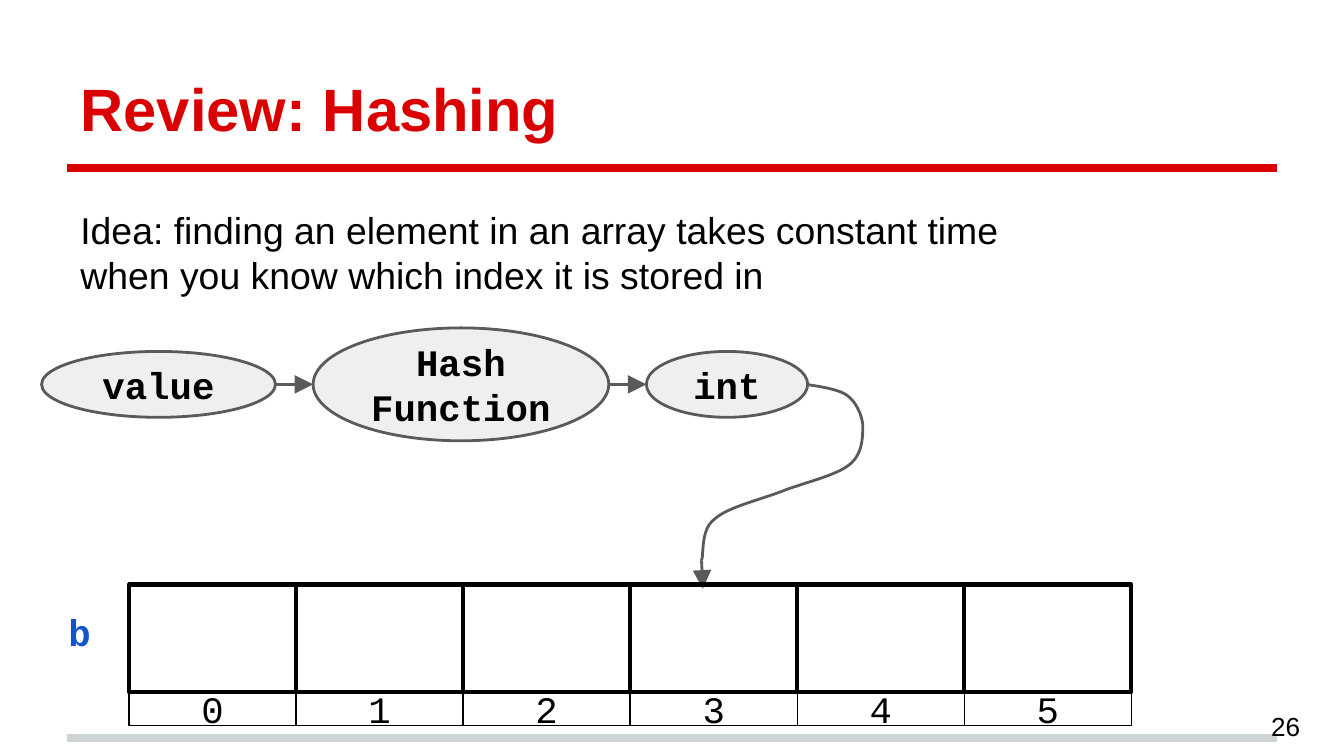
from lxml.etree import SubElement
from pptx import Presentation
from pptx.dml.color import RGBColor
from pptx.enum.shapes import MSO_CONNECTOR, MSO_SHAPE
from pptx.enum.text import MSO_ANCHOR, PP_ALIGN
from pptx.oxml.ns import qn
from pptx.util import Emu, Inches, Pt

RED = RGBColor(0xDA, 0x00, 0x02)
SILVER = RGBColor(0xCF, 0xD4, 0xD4)
GRAY = RGBColor(0x5B, 0x59, 0x5A)
LIGHT = RGBColor(0xEF, 0xEF, 0xEF)
BLUE = RGBColor(0x11, 0x55, 0xCC)
BLACK = RGBColor(0, 0, 0)
MONO = "Courier New"


def write(sp, text, size=20, font="Arial", color=BLACK, bold=False,
          align=PP_ALIGN.LEFT, anchor=MSO_ANCHOR.TOP):
    tf = sp.text_frame
    tf.word_wrap = True
    tf.vertical_anchor = anchor
    tf.margin_left = tf.margin_right = tf.margin_top = tf.margin_bottom = Inches(0.1)
    p = tf.paragraphs[0]
    p.alignment = align
    r = p.add_run()
    r.text = text
    r.font.size, r.font.name, r.font.bold = Pt(size), font, bold
    r.font.color.rgb = color


def add_line(x1, y1, x2, y2, color=GRAY, width=1.5, arrow=True):
    c = s.shapes.add_connector(MSO_CONNECTOR.STRAIGHT, Inches(x1), Inches(y1),
                               Inches(x2), Inches(y2))
    c.line.color.rgb = color
    c.line.width = Pt(width)
    if arrow:
        SubElement(c.line._get_or_add_ln(), qn("a:tailEnd"), type="triangle", w="lg", len="lg")
    SubElement(c._element.spPr, qn("a:effectLst"))


prs = Presentation()
prs.slide_width = Inches(10)
prs.slide_height = Emu(prs.slide_width * 9 // 16)
s = prs.slides.add_slide(prs.slide_layouts[5])

# Rules and title
for y, color in ((5.49, SILVER), (1.25, RED)):
    add_line(0.5, y, 9.5, y, color, 4, arrow=False)
title = s.shapes.title
title.left, title.top, title.width, title.height = map(Inches, (0.5, 0.23, 9, 0.94))
write(title, "Review: Hashing", size=32, color=RED, bold=True, anchor=MSO_ANCHOR.BOTTOM)

# Flow from value to index
FLOW_Y = 2.86
steps = (("value", 0.31, 1.74, 0.49), ("Hash Function", 2.33, 2.2, 0.84),
         ("int", 4.81, 1.2, 0.49))
for text, x, w, h in steps:
    sp = s.shapes.add_shape(MSO_SHAPE.OVAL, Inches(x), Inches(FLOW_Y - h / 2),
                            Inches(w), Inches(h))
    sp.shadow.inherit = False
    sp.fill.solid()
    sp.fill.fore_color.rgb = LIGHT
    sp.line.color.rgb = GRAY
    sp.line.width = Pt(1.5)
    write(sp, text, font=MONO, bold=True, align=PP_ALIGN.CENTER, anchor=MSO_ANCHOR.MIDDLE)
for (_, x, w, _), (_, next_x, _, _) in zip(steps, steps[1:]):
    add_line(x + w, FLOW_Y, next_x, FLOW_Y)

# Curve from int to the array: Bezier segments, each sampled in short steps
start = (6, 2.86)
segments = (((6.05, 2.87), (6.23, 2.89), (6.3, 2.94)),
            ((6.37, 2.99), (6.41, 3.08), (6.42, 3.16)),
            ((6.42, 3.25), (6.42, 3.37), (6.33, 3.45)),
            ((6.24, 3.53), (6.03, 3.58), (5.86, 3.64)),
            ((5.69, 3.71), (5.42, 3.77), (5.32, 3.86)),
            ((5.21, 3.94), (5.24, 4.12), (5.22, 4.17)))
STEPS = 12
points, p0 = [], start
for p1, p2, p3 in segments:
    for i in range(1, STEPS + 1):
        t = i / STEPS
        u = 1 - t
        points.append(tuple(Inches(u**3 * a + 3 * u * u * t * b + 3 * u * t * t * c + t**3 * d)
                            for a, b, c, d in zip(p0, p1, p2, p3)))
    p0 = p3
builder = s.shapes.build_freeform(*map(Inches, start))
builder.add_line_segments(points, close=False)
curve = builder.convert_to_shape()
curve.shadow.inherit = False
curve.fill.background()
curve.line.color.rgb = GRAY
curve.line.width = Pt(1.5)
add_line(*p0, 5.23, 4.38)

# Array cells above their indices
LEFT, CELL_W = 0.96, 1.243
array = s.shapes.add_group_shape()
for top, height, width in ((4.35, 0.8, 2.25), (5.15, 0.25, 0.75)):
    for i in range(6):
        sp = array.shapes.add_shape(MSO_SHAPE.RECTANGLE, Inches(LEFT + i * CELL_W),
                                    Inches(top), Inches(CELL_W), Inches(height))
        sp.shadow.inherit = False
        sp.fill.background()
        sp.line.color.rgb = BLACK
        sp.line.width = Pt(width)
        if top > 5:
            write(sp, str(i), font=MONO, align=PP_ALIGN.CENTER, anchor=MSO_ANCHOR.MIDDLE)

# Free text
idea = "Idea: finding an element in an array takes constant time when you know which index it is stored in"
for text, box, style in (
        ("b", (0.41, 4.43, 0.5, 0.53), dict(font=MONO, color=BLUE, bold=True)),
        (idea, (0.5, 1.44, 7.13, 0.89), {}),
        ("26", (9.36, 5.19, 0.6, 0.43), dict(size=14, anchor=MSO_ANCHOR.MIDDLE))):
    write(s.shapes.add_textbox(*map(Inches, box)), text, **style)

prs.save("out.pptx")
